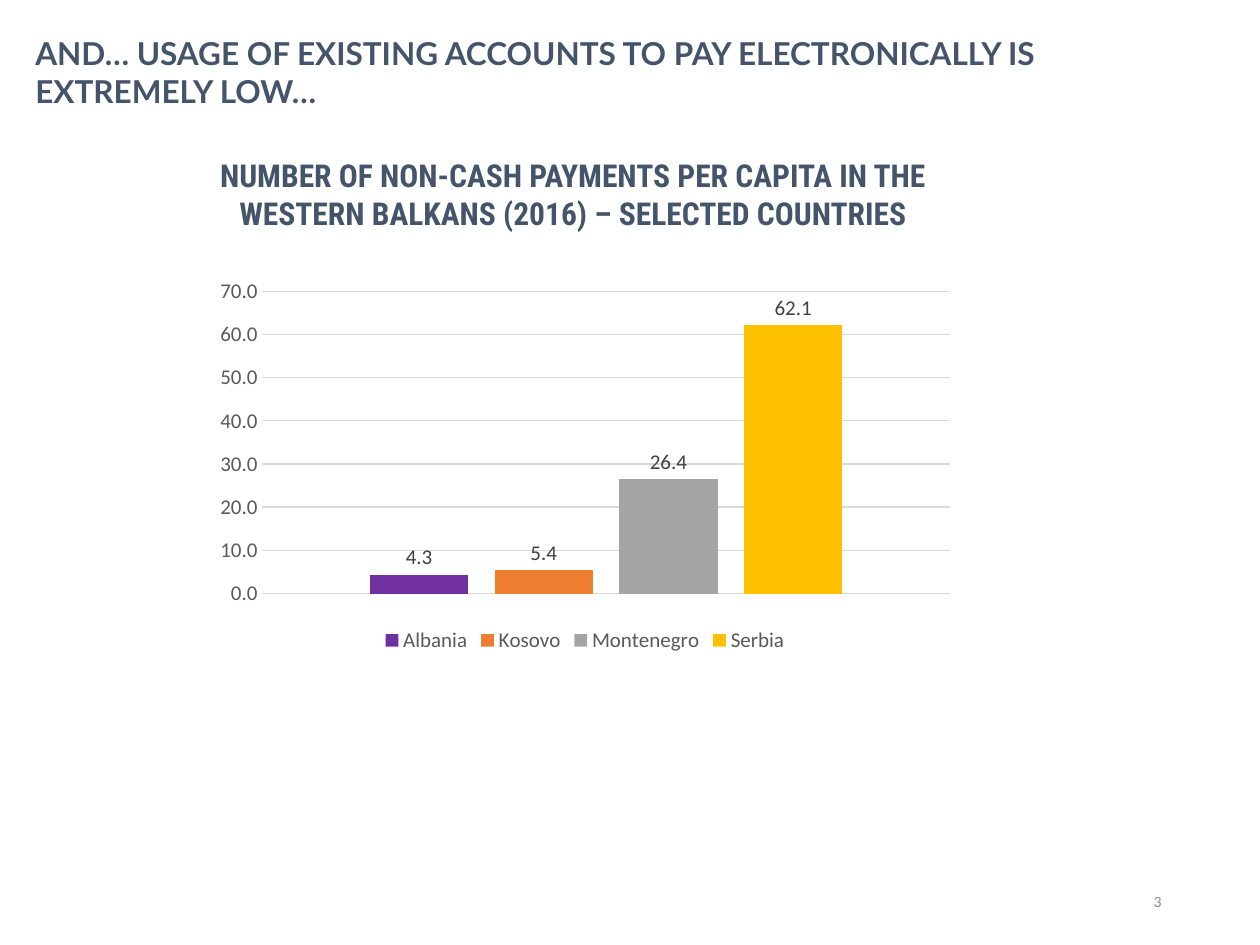
import pptx
import pptx.chart.data
import pptx.dml.color
import pptx.enum.chart
import pptx.enum.text
import pptx.util

RGB = pptx.dml.color.RGBColor
ALIGN = pptx.enum.text.PP_ALIGN
ANCHOR = pptx.enum.text.MSO_ANCHOR
CHART = pptx.enum.chart

NAVY = RGB(0x44, 0x54, 0x6A)
PALE = RGB(0x8C, 0x8C, 0x8C)
GREY = RGB(0x59, 0x59, 0x59)
DARK = RGB(0x40, 0x40, 0x40)
GRID = RGB(0xD9, 0xD9, 0xD9)
BLACK = RGB(0x00, 0x00, 0x00)
PURPLE = RGB(0x70, 0x30, 0xA0)
ORANGE = RGB(0xED, 0x7D, 0x31)
SILVER = RGB(0xA5, 0xA5, 0xA5)
GOLD = RGB(0xFF, 0xC0, 0x00)

DPI = 126
BARS = [
    ("Albania", 4.3, PURPLE),
    ("Kosovo", 5.4, ORANGE),
    ("Montenegro", 26.4, SILVER),
    ("Serbia", 62.1, GOLD),
]


def px(n):
    return pptx.util.Emu(round(n * 914400 / DPI))


def style(font, face, size, color, bold=False):
    font.name = face
    font.size = pptx.util.Pt(size)
    font.color.rgb = color
    font.bold = bold


def write(slide, box, text, face, size, color, bold=False,
          align=ALIGN.LEFT, anchor=ANCHOR.TOP):
    frame = slide.shapes.add_textbox(*map(px, box)).text_frame
    frame.word_wrap = True
    frame.vertical_anchor = anchor
    para = frame.paragraphs[0]
    para.text = text
    para.alignment = align
    style(para.font, face, size, color, bold)


def plot(slide, box):
    data = pptx.chart.data.CategoryChartData(number_format="0.0")
    data.categories = ["1"]
    for name, value, _ in BARS:
        data.add_series(name, [value])
    kind = CHART.XL_CHART_TYPE.COLUMN_CLUSTERED
    chart = slide.shapes.add_chart(kind, *map(px, box), data).chart
    style(chart.font, "Calibri", 10, BLACK)
    chart.has_title = False
    chart.has_legend = True
    chart.legend.position = CHART.XL_LEGEND_POSITION.BOTTOM
    chart.legend.include_in_layout = False
    style(chart.legend.font, "Calibri", 12, GREY)

    chart.category_axis.visible = False
    axis = chart.value_axis
    axis.major_tick_mark = CHART.XL_TICK_MARK.NONE
    axis.minor_tick_mark = CHART.XL_TICK_MARK.NONE
    axis.format.line.fill.background()
    axis.has_major_gridlines = True
    line = axis.major_gridlines.format.line
    line.color.rgb = GRID
    line.width = pptx.util.Pt(0.75)
    axis.tick_labels.number_format = "0.0"
    axis.tick_labels.number_format_is_linked = False
    style(axis.tick_labels.font, "Calibri", 12, GREY)

    group = chart.plots[0]
    group.gap_width = 219
    group.overlap = -27
    group.vary_by_categories = False
    for bar, (_, _, color) in zip(group.series, BARS):
        bar.invert_if_negative = False
        bar.format.fill.solid()
        bar.format.fill.fore_color.rgb = color
        tag = bar.data_labels
        tag.show_value = True
        tag.number_format = "0.0"
        tag.number_format_is_linked = False
        tag.position = CHART.XL_LABEL_POSITION.OUTSIDE_END
        style(tag.font, "Calibri", 12, DARK)


def panel(slide, box):
    left, top, width, height = box
    write(slide, (left, top, width - 24, 89),
          "NUMBER OF NON-CASH PAYMENTS PER CAPITA IN THE WESTERN BALKANS "
          "(2016) – SELECTED COUNTRIES",
          "Roboto Condensed", 18, NAVY, True, ALIGN.CENTER)
    plot(slide, (left, top + 121, width, height - 121))


def main():
    deck = pptx.Presentation()
    deck.slide_width = px(1260)
    deck.slide_height = px(945)
    slide = deck.slides.add_slide(deck.slide_layouts[6])
    write(slide, (890, 876, 284, 50), "3", "Calibri", 9, PALE,
          align=ALIGN.RIGHT, anchor=ANCHOR.MIDDLE)
    write(slide, (23, 28, 1200, 89),
          "AND… USAGE OF EXISTING ACCOUNTS TO PAY ELECTRONICALLY IS "
          "EXTREMELY LOW…", "Lato", 18, NAVY, True)
    panel(slide, (205, 150, 760, 508))
    deck.save("out.pptx")


if __name__ == "__main__":
    main()
